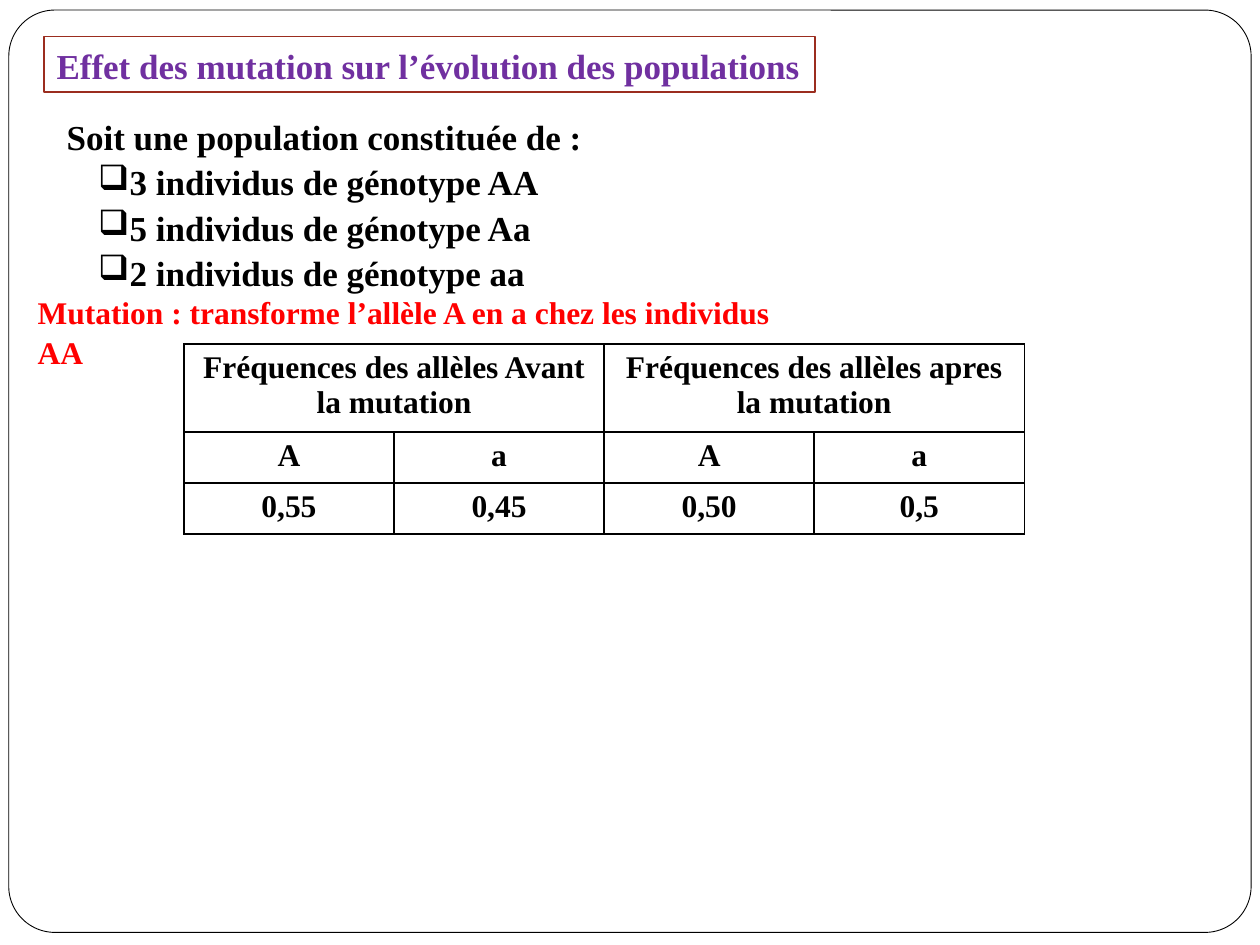
import pptx
import pptx.util
import pptx.dml.color
import pptx.enum.shapes
import pptx.enum.text
import pptx.oxml
from pptx.util import Inches

NAMESPACE = 'xmlns:a="http://schemas.openxmlformats.org/drawingml/2006/main"'


def color(value):
    return pptx.dml.color.RGBColor.from_string(value)


def add_text(paragraph, text, size, value):
    run = paragraph.add_run()
    run.text = text
    run.font.name = "Times New Roman"
    run.font.size = pptx.util.Pt(size)
    run.font.bold = True
    run.font.color.rgb = color(value)


presentation = pptx.Presentation()
presentation.slide_width = Inches(10)
presentation.slide_height = Inches(7.5)
slide = presentation.slides.add_slide(presentation.slide_layouts[6])
shapes = slide.shapes
kinds = pptx.enum.shapes.MSO_SHAPE

frame = shapes.add_shape(kinds.ROUNDED_RECTANGLE, Inches(0.07), Inches(0.08), Inches(9.86), Inches(7.32))
frame.adjustments[0] = 0.05
title = shapes.add_shape(kinds.RECTANGLE, Inches(0.35), Inches(0.29), Inches(6.12), Inches(0.44))
for shape, line_color, line_width in [(frame, "000000", 0.5), (title, "9B2D1F", 1)]:
    shape.shadow.inherit = False
    shape.fill.solid()
    shape.fill.fore_color.rgb = color("FFFFFF")
    shape.line.color.rgb = color(line_color)
    shape.line.width = pptx.util.Pt(line_width)

title.text_frame.word_wrap = False
title_paragraph = title.text_frame.paragraphs[0]
title_paragraph.alignment = pptx.enum.text.PP_ALIGN.LEFT
title_paragraph.line_spacing = 1.08
add_text(title_paragraph, "Effet des mutation sur l’évolution des populations", 20, "7030A0")

population = shapes.add_textbox(Inches(0.43), Inches(0.84), Inches(4.72), Inches(1.78)).text_frame
population.word_wrap = True
population.paragraphs[0].line_spacing = 1.08
add_text(population.paragraphs[0], "Soit une population constituée de :", 20, "000000")
for count, genotype in [(3, "AA"), (5, "Aa"), (2, "aa")]:
    paragraph = population.add_paragraph()
    paragraph.level = 1
    paragraph.line_spacing = 1.08
    properties = paragraph._p.get_or_add_pPr()
    properties.set("marL", str(Inches(0.5)))
    properties.set("indent", str(Inches(-0.25)))
    properties.append(pptx.oxml.parse_xml(f'<a:buChar {NAMESPACE} char="❑"/>'))
    add_text(paragraph, f"{count} individus de génotype {genotype}", 20, "000000")

mutation = shapes.add_textbox(Inches(0.2), Inches(2.25), Inches(6.38), Inches(0.4)).text_frame
mutation.word_wrap = True
mutation.paragraphs[0].line_spacing = 1.08
add_text(mutation.paragraphs[0], "Mutation : transforme l’allèle A en a chez les individus AA", 18, "FF0000")

rows = [
    ["Fréquences des allèles Avant la mutation", "", "Fréquences des allèles apres la mutation", ""],
    ["A", "a", "A", "a"],
    ["0,55", "0,45", "0,50", "0,5"],
]
table = shapes.add_table(3, 4, Inches(1.46), Inches(2.73), Inches(6.67), Inches(1.51)).table
for row, height in zip(table.rows, [0.7, 0.405, 0.405]):
    row.height = Inches(height)
for left in (0, 2):
    table.cell(0, left).merge(table.cell(0, left + 1))
for row_index, texts in enumerate(rows):
    for column_index, text in enumerate(texts):
        cell = table.cell(row_index, column_index)
        properties = cell._tc.get_or_add_tcPr()
        for side in ("lnL", "lnR", "lnT", "lnB"):
            properties.append(pptx.oxml.parse_xml(
                f'<a:{side} {NAMESPACE} w="12700"><a:solidFill><a:srgbClr val="000000"/></a:solidFill></a:{side}>'))
        cell.fill.background()
        if text:
            paragraph = cell.text_frame.paragraphs[0]
            paragraph.alignment = pptx.enum.text.PP_ALIGN.CENTER
            add_text(paragraph, text, 18, "000000")

presentation.save("out.pptx")
